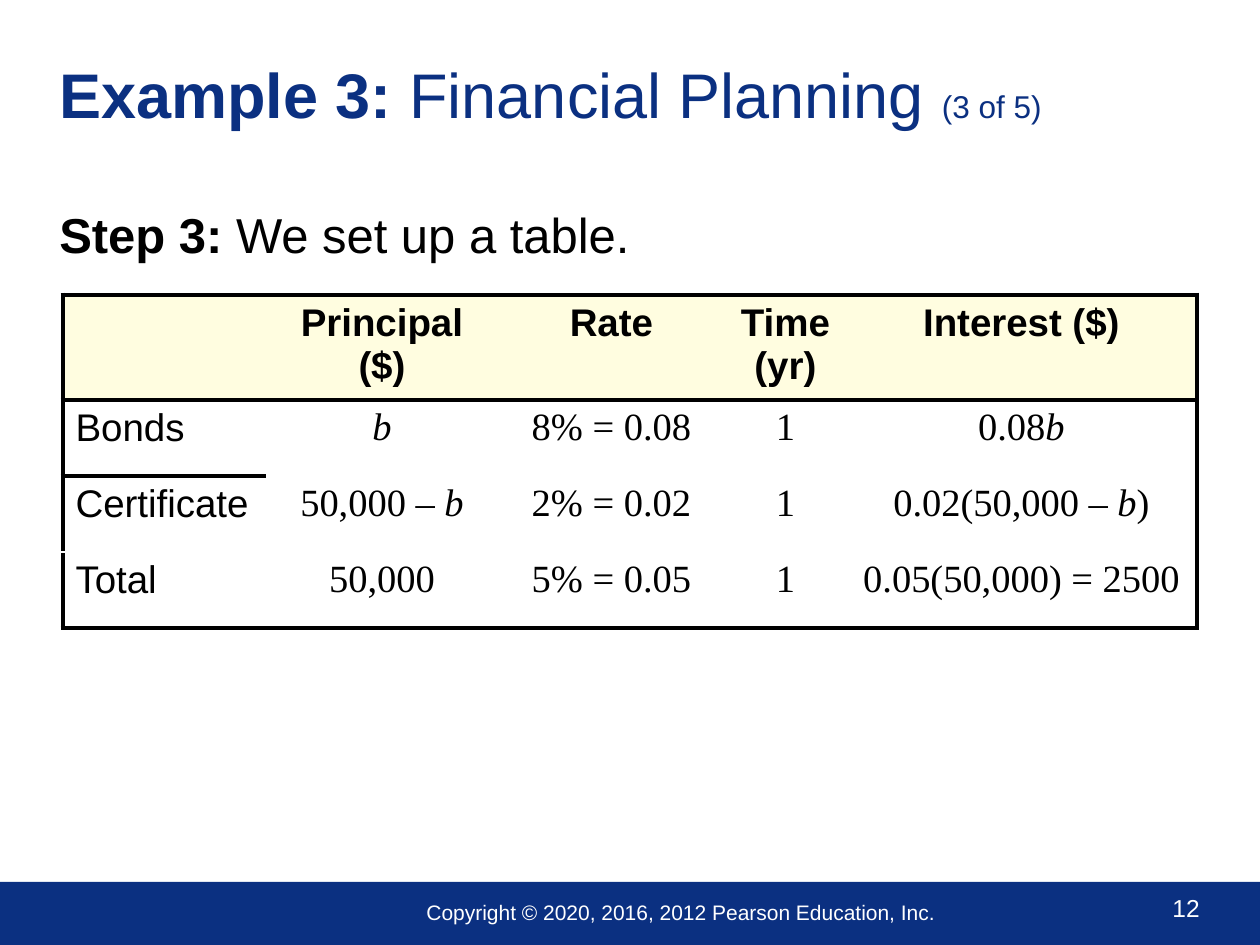
"""Build the financial planning slide with its interest table."""
import pptx
import pptx.dml.color
import pptx.enum.text
import pptx.oxml
import pptx.oxml.ns
import pptx.util

PX = 914400 // 126
NAVY, CREAM, BLACK, WHITE = "0B3081", "FFFDE0", "000000", "FFFFFF"
SANS, SERIF = "Arial", "Times New Roman"


def paint(color_format, color):
    """Set a colour from a hex string."""
    color_format.rgb = pptx.dml.color.RGBColor.from_string(color)


def add_runs(paragraph, runs, color):
    """Add (text, size, font, style) runs, where style is "", "b" or "i"."""
    for text, size, font, style in runs:
        run = paragraph.add_run()
        run.text = text
        run.font.size = pptx.util.Pt(size)
        run.font.name = font
        run.font.bold = style == "b"
        run.font.italic = style == "i"
        paint(run.font.color, color)


presentation = pptx.Presentation()
presentation.slide_width = 1260 * PX
presentation.slide_height = 945 * PX
slide = presentation.slides.add_slide(presentation.slide_layouts[6])

footer = slide.shapes.add_shape(1, 0, 882 * PX, 1260 * PX, 63 * PX)
footer.shadow.inherit = False
footer.fill.solid()
paint(footer.fill.fore_color, NAVY)
footer.line.fill.background()

top, middle = pptx.enum.text.MSO_ANCHOR.TOP, pptx.enum.text.MSO_ANCHOR.MIDDLE
copyright_line = "Copyright © 2020, 2016, 2012 Pearson Education, Inc."
text_boxes = [
    ((1160, 887, 93, 43), top, WHITE, [("12", 14, SANS, "")]),
    ((414, 893, 547, 38), top, WHITE, [(copyright_line, 12, SANS, "")]),
    ((47, 21, 1150, 144), middle, NAVY, [
        ("Example 3: ", 36, SANS, "b"),
        ("Financial Planning ", 36, SANS, ""),
        ("(3 of 5)", 18, SANS, ""),
    ]),
    ((47, 198, 1150, 658), top, BLACK, [
        ("Step 3:", 28, SANS, "b"),
        (" We set up a table.", 28, SANS, ""),
    ]),
]
for box, anchor, color, runs in text_boxes:
    shape = slide.shapes.add_textbox(*(length * PX for length in box))
    shape.text_frame.word_wrap = True
    shape.text_frame.vertical_anchor = anchor
    add_runs(shape.text_frame.paragraphs[0], runs, color)

rows = [
    [[], ["Principal ($)"], ["Rate"], ["Time (yr)"], ["Interest ($)"]],
    [["Bonds"], ["b"], ["8% = 0.08"], ["1"], ["0.08", "b"]],
    [["Certificate"], ["50,000 – ", "b"], ["2% = 0.02"], ["1"], ["0.02(50,000 – ", "b", ")"]],
    [["Total"], ["50,000"], ["5% = 0.05"], ["1"], ["0.05(50,000) = 2500"]],
]
column_widths = [203, 232, 227, 121, 351]
row_heights = [98, 76, 76, 76]
frame = slide.shapes.add_table(
    len(rows), len(column_widths), 63 * PX, 295 * PX,
    sum(column_widths) * PX, sum(row_heights) * PX)
table = frame.table
table.horz_banding = False
for column, width in zip(table.columns, column_widths):
    column.width = width * PX
for row, height in zip(table.rows, row_heights):
    row.height = height * PX

thick, thin = (BLACK, 3), (WHITE, 1)
first_column_rules = [thick, thick, thick, thin, thick]
other_column_rules = [thick, thick, None, None, thick]
namespace = pptx.oxml.ns.nsdecls("a")
for row_index, row in enumerate(rows):
    for column_index, texts in enumerate(row):
        cell = table.cell(row_index, column_index)
        rules = other_column_rules if column_index else first_column_rules
        borders = {
            "lnL": None if column_index else thick,
            "lnR": thick if column_index == len(row) - 1 else None,
            "lnT": rules[row_index],
            "lnB": rules[row_index + 1],
        }
        properties = cell._tc.get_or_add_tcPr()
        for side, border in borders.items():
            if border:
                color, points = border
                xml = (f'<a:{side} {namespace} w="{pptx.util.Pt(points)}"><a:solidFill>'
                       f'<a:srgbClr val="{color}"/></a:solidFill></a:{side}>')
            else:
                xml = f'<a:{side} {namespace} w="0"><a:noFill/></a:{side}>'
            properties.append(pptx.oxml.parse_xml(xml))
        if row_index == 0:
            cell.fill.solid()
            paint(cell.fill.fore_color, CREAM)
        else:
            cell.fill.background()
        paragraph = cell.text_frame.paragraphs[0]
        if row_index == 0 or column_index:
            paragraph.alignment = pptx.enum.text.PP_ALIGN.CENTER
        font = SERIF if row_index and column_index else SANS
        runs = [(text, 22, font, "b" if row_index == 0 else "i" if text == "b" else "")
                for text in texts]
        add_runs(paragraph, runs, BLACK)

presentation.save("out.pptx")
